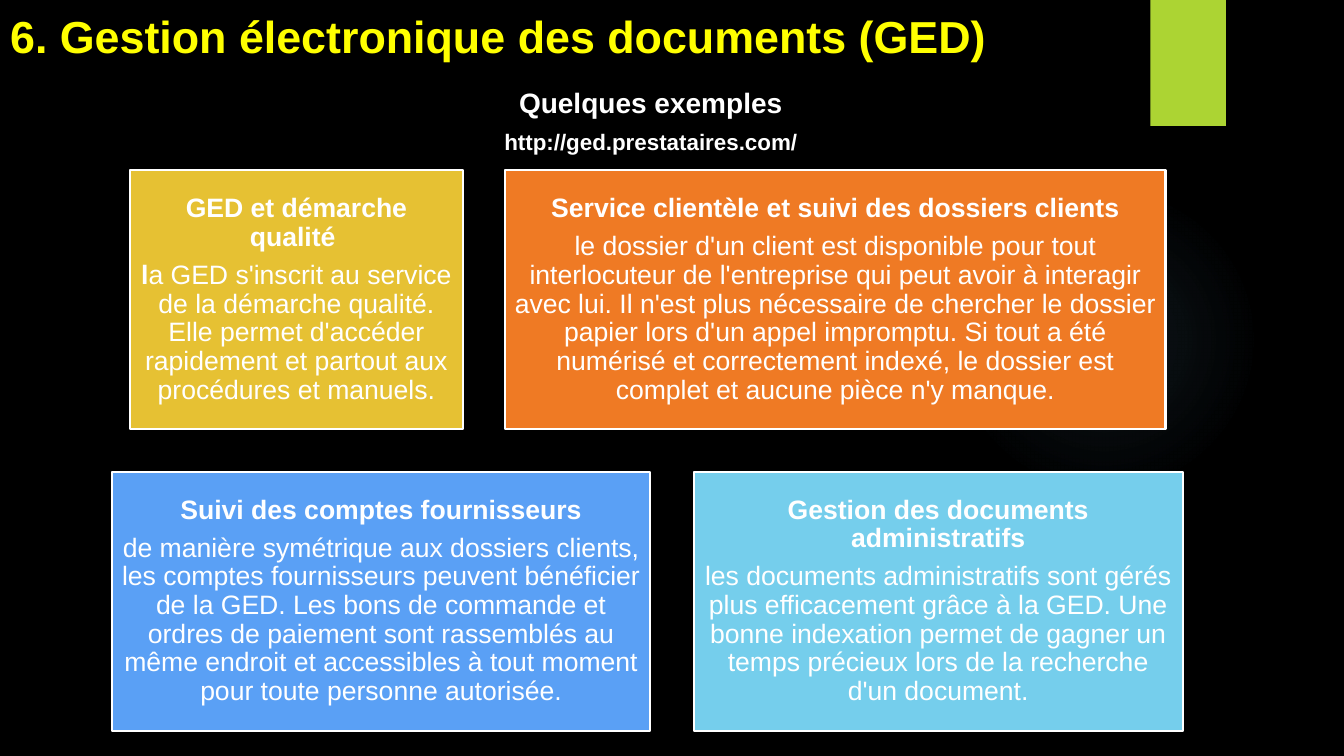
from dataclasses import dataclass

from lxml.etree import SubElement
from pptx import Presentation
from pptx.dml.color import RGBColor
from pptx.enum.shapes import MSO_SHAPE
from pptx.enum.text import MSO_ANCHOR, MSO_AUTO_SIZE, PP_ALIGN
from pptx.oxml.ns import qn
from pptx.shapes.autoshape import Shape
from pptx.slide import Slide
from pptx.text.text import TextFrame
from pptx.util import Emu, Pt

NBSP = chr(160)
PANEL_HEIGHT = 257
TOP_ROW, BOTTOM_ROW = 169, 468


@dataclass(frozen=True)
class Theme:
    font: str = "Arial"
    background: str = "000000"
    text: str = "FFFFFF"
    title: str = "FFFF00"
    ribbon: str = "ACD433"
    glow: str = "7AC4F0"
    title_size: int = 32
    subtitle_size: int = 20
    link_size: int = 16
    panel_size: int = 19


@dataclass(frozen=True)
class Panel:
    left: int
    top: int
    width: int
    color: str
    heading: str
    body: str
    bold_start: str = ""


THEME = Theme()
PANELS = [
    Panel(129, TOP_ROW, 330, "E6C133", "GED et démarche qualité" + NBSP,
          "a GED s'inscrit au service de la démarche qualité. Elle permet d'accéder "
          "rapidement et partout aux procédures et manuels.", bold_start="l"),
    Panel(501, TOP_ROW, 655, "EF7A24", "Service clientèle et suivi des dossiers clients",
          "le dossier d'un client est disponible pour tout interlocuteur de l'entreprise "
          "qui peut avoir à interagir avec lui. Il n'est plus nécessaire de chercher le "
          "dossier papier lors d'un appel impromptu. Si tout a été numérisé et "
          "correctement indexé, le dossier est complet et aucune pièce n'y manque."),
    Panel(111, BOTTOM_ROW, 534, "5AA0F5", "Suivi des comptes fournisseurs",
          "de manière symétrique aux dossiers clients, les comptes fournisseurs peuvent "
          "bénéficier de la GED. Les bons de commande et ordres de paiement sont "
          "rassemblés au même endroit et accessibles à tout moment pour toute personne "
          "autorisée."),
    Panel(688, BOTTOM_ROW, 485, "75CEEC", "Gestion des documents administratifs",
          "les documents administratifs sont gérés plus efficacement grâce à la GED. Une "
          "bonne indexation permet de gagner un temps précieux lors de la recherche d'un "
          "document."),
]


def px(length: int) -> Emu:
    """Convert px, at 100 to the inch, into EMU."""
    return Emu(length * 9144)


def write(frame: TextFrame, text: str, *, size: int, color: str = THEME.text,
          bold: bool = True, bold_start: str = "", align: PP_ALIGN = PP_ALIGN.CENTER,
          line_spacing: float = 1.0, before: float = 0, after: float = 0) -> None:
    """Add a paragraph, using the first one while it is still empty."""
    first = frame.paragraphs[0]
    paragraph = frame.add_paragraph() if first.runs else first
    paragraph.alignment = align
    paragraph.line_spacing = line_spacing
    paragraph.space_before = Pt(before)
    paragraph.space_after = Pt(after)
    for part, is_bold in ((bold_start, True), (text, bold)):
        if part:
            run = paragraph.add_run()
            run.text = part
            run.font.name = THEME.font
            run.font.size = Pt(size)
            run.font.bold = is_bold
            run.font.color.rgb = RGBColor.from_string(color)


def add_filled(slide: Slide, kind: MSO_SHAPE, left: int, top: int, width: int,
               height: int, color: str) -> Shape:
    shape = slide.shapes.add_shape(kind, px(left), px(top), px(width), px(height))
    shape.shadow.inherit = False
    shape.fill.solid()
    shape.fill.fore_color.rgb = RGBColor.from_string(color)
    shape.line.fill.background()
    return shape


def add_glow(slide: Slide) -> None:
    """Add a disc that fades out from its centre."""
    disc = add_filled(slide, MSO_SHAPE.OVAL, 941, 183, 308, 308, THEME.glow)
    properties = disc.fill._xPr
    solid = properties.find(qn("a:solidFill"))
    gradient = solid.makeelement(qn("a:gradFill"), {"rotWithShape": "1"})
    properties.replace(solid, gradient)
    stops = SubElement(gradient, qn("a:gsLst"))
    for position, opacity in ((0, 7), (36, 6), (69, 0)):
        stop = SubElement(stops, qn("a:gs"), pos=str(position * 1000))
        color = SubElement(stop, qn("a:srgbClr"), val=THEME.glow)
        SubElement(color, qn("a:alpha"), val=str(opacity * 1000))
    circle = SubElement(gradient, qn("a:path"), {"path": "circle"})
    SubElement(circle, qn("a:fillToRect"), l="50000", t="50000", r="50000", b="50000")


def add_title(slide: Slide) -> None:
    title = slide.shapes.title
    title.left, title.top, title.width, title.height = px(0), px(4), px(996), px(64)
    frame = title.text_frame
    frame.auto_size = MSO_AUTO_SIZE.NONE
    frame.word_wrap = True
    frame.vertical_anchor = MSO_ANCHOR.TOP
    write(frame, "6. Gestion électronique des documents (GED)",
          size=THEME.title_size, color=THEME.title, align=PP_ALIGN.LEFT)


def add_subtitle(slide: Slide) -> None:
    frame = slide.shapes.add_textbox(px(51), px(80), px(1189), px(79)).text_frame
    frame.word_wrap = True
    write(frame, "Quelques exemples", size=THEME.subtitle_size)
    write(frame, "http://ged.prestataires.com/", size=THEME.link_size, before=6)


def add_panel(slide: Slide, panel: Panel) -> None:
    box = add_filled(slide, MSO_SHAPE.RECTANGLE, panel.left, panel.top, panel.width,
                     PANEL_HEIGHT, panel.color)
    box.line.color.rgb = RGBColor.from_string(THEME.text)
    box.line.width = Pt(1.5)
    frame = box.text_frame
    frame.word_wrap = True
    frame.vertical_anchor = MSO_ANCHOR.MIDDLE
    frame.margin_left = frame.margin_right = px(8)
    frame.margin_top = frame.margin_bottom = px(8)
    write(frame, panel.heading, size=THEME.panel_size, line_spacing=0.9, after=6.65)
    write(frame, panel.body, size=THEME.panel_size, bold=False,
          bold_start=panel.bold_start, line_spacing=0.9)


def main() -> None:
    deck = Presentation()
    deck.slide_width, deck.slide_height = px(1333), px(750)
    slide = deck.slides.add_slide(deck.slide_layouts[5])
    slide.background.fill.solid()
    slide.background.fill.fore_color.rgb = RGBColor.from_string(THEME.background)
    add_glow(slide)
    add_filled(slide, MSO_SHAPE.RECTANGLE, 1141, 0, 75, 125, THEME.ribbon)
    add_subtitle(slide)
    add_title(slide)
    for panel in PANELS:
        add_panel(slide, panel)
    deck.save("out.pptx")


if __name__ == "__main__":
    main()
